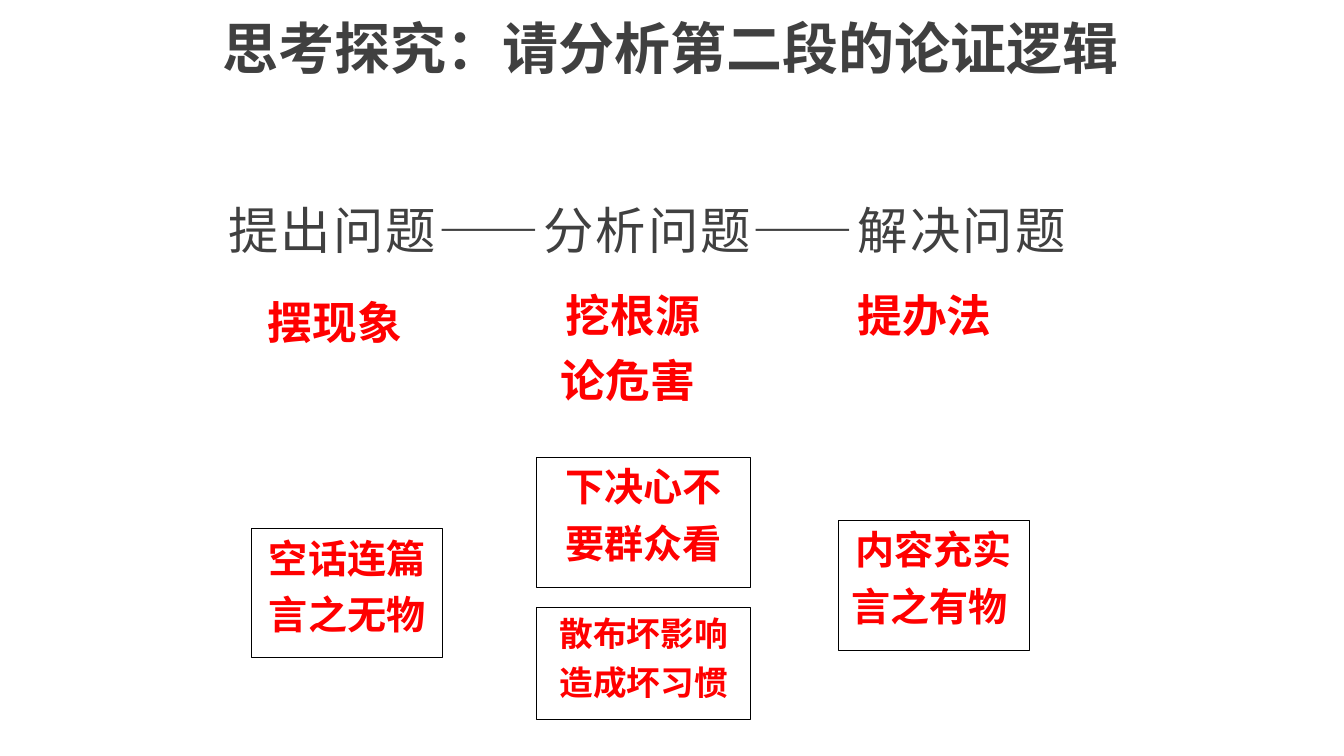
from lxml import etree
from pptx import Presentation
from pptx.dml.color import RGBColor
from pptx.enum import shapes, text
from pptx.oxml.ns import qn
from pptx.util import Inches, Pt

COLORS = {"ink": "404040", "answer": "FF0000", "border": "000000"}
EAST_ASIAN_FONT = "Noto Sans CJK SC"
CENTER, LEFT = text.PP_ALIGN.CENTER, text.PP_ALIGN.LEFT


def write_lines(shape, lines, size, color, bold=True, font="Arial",
                align=CENTER, anchor=text.MSO_ANCHOR.TOP):
    """Fill the shape with one paragraph per line; later ones are set apart."""
    frame = shape.text_frame
    frame.word_wrap = True
    frame.vertical_anchor = anchor
    frame.text = "\n".join(lines)
    for index, paragraph in enumerate(frame.paragraphs):
        paragraph.alignment = align
        if index:
            paragraph.space_before = Pt(round(size / 4, 1))
        paragraph.font.size = Pt(size)
        paragraph.font.bold = bold
        paragraph.font.name = font
        paragraph.font.color.rgb = RGBColor.from_string(COLORS[color])
        properties = paragraph.font._element
        etree.SubElement(properties, qn("a:ea"), typeface=EAST_ASIAN_FONT)
    return frame


def add_text(slide, box):
    return slide.shapes.add_textbox(*map(Inches, box))


def add_title(slide, box):
    write_lines(add_text(slide, box), ["思考探究：请分析第二段的论证逻辑"], 37.8, "ink",
                font="Times New Roman", anchor=text.MSO_ANCHOR.MIDDLE)


def add_stages(slide, box):
    """Write the three stages of the argument on one spaced-out line."""
    stages = ["提出问题", "分析问题", "解决问题"]
    frame = write_lines(add_text(slide, box), ["——".join(stages)], 34, "ink",
                        bold=False, align=LEFT)
    frame.margin_left = frame.margin_right = Inches(0.09)
    paragraph = frame.paragraphs[0]
    paragraph.line_spacing = 1.3
    paragraph.font._element.set("spc", "150")


def add_method(slide, box, lines, align=CENTER, font="Arial"):
    write_lines(add_text(slide, box), lines, 30.2, "answer", font=font, align=align)


def add_evidence(slide, box, lines, size=26.4, font="Arial"):
    """Draw a thinly framed box with the evidence from the paragraph."""
    shape = slide.shapes.add_shape(shapes.MSO_SHAPE.RECTANGLE, *map(Inches, box))
    shape.shadow.inherit = False
    shape.fill.background()
    shape.line.color.rgb = RGBColor.from_string(COLORS["border"])
    shape.line.width = Pt(0.75)
    write_lines(shape, lines, size, "answer", font=font)


def main():
    presentation = Presentation()
    presentation.slide_width = Inches(12.6)
    presentation.slide_height = Inches(7.09)
    slide = presentation.slides.add_slide(presentation.slide_layouts[6])

    add_stages(slide, (2.05, 1.65, 8.35, 0.77))

    add_method(slide, (2.21, 2.72, 1.86, 0.61), ["摆现象"])
    add_method(slide, (4.89, 2.65, 2.09, 1.37), ["挖根源", "论危害 "],
               font=EAST_ASIAN_FONT)
    add_method(slide, (7.94, 2.65, 1.79, 0.61), ["提办法"], align=LEFT)

    add_evidence(slide, (2.36, 4.96, 1.79, 1.21), ["空话连篇", "言之无物"])
    add_evidence(slide, (5.03, 4.29, 2.01, 1.22), ["下决心不", "要群众看"])
    add_evidence(slide, (5.03, 5.7, 2.01, 1.05), ["散布坏影响", "造成坏习惯"], size=22.7)
    add_evidence(slide, (7.86, 4.88, 1.79, 1.22), ["内容充实", "言之有物 "],
                 font="Noto Sans CJK JP")

    add_title(slide, (0.85, 0.02, 10.87, 0.85))
    presentation.save("out.pptx")


if __name__ == "__main__":
    main()
